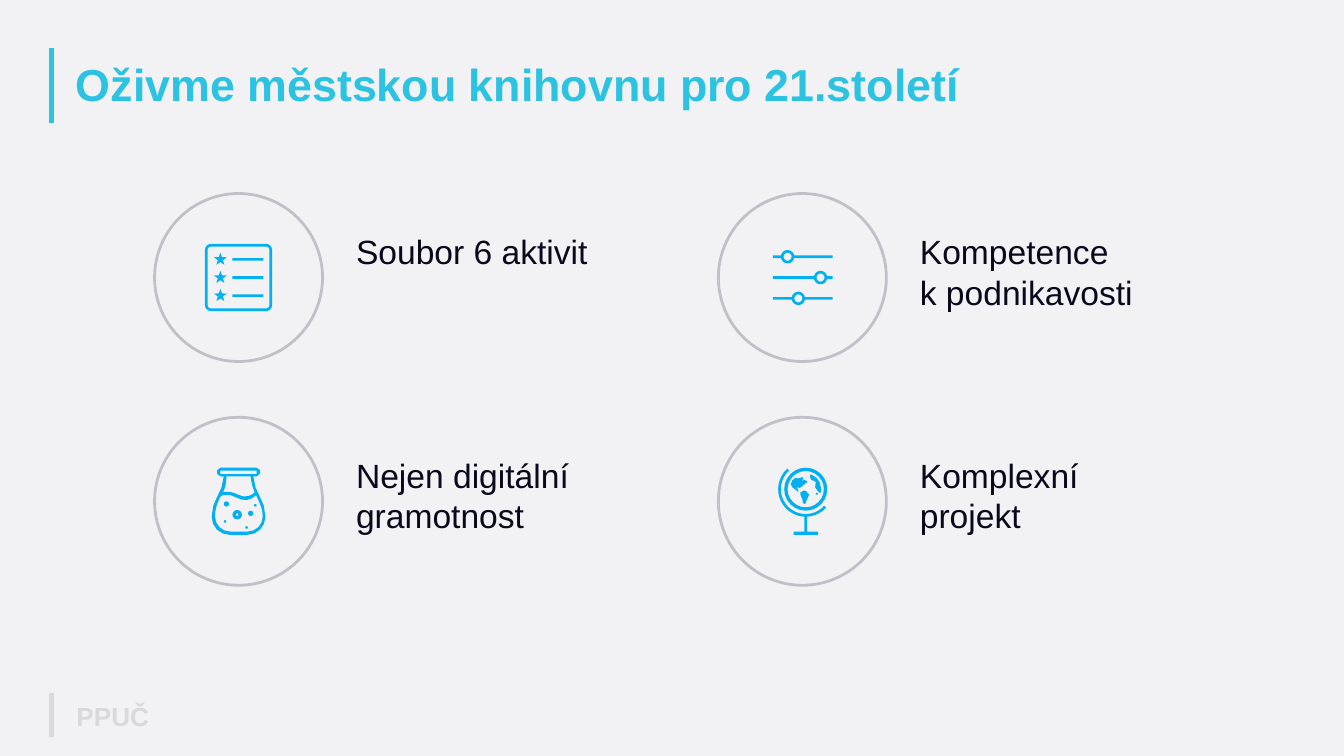
from math import cos, radians, sin

from lxml.etree import SubElement
from pptx import Presentation
from pptx.dml.color import RGBColor
from pptx.enum.shapes import MSO_CONNECTOR, MSO_SHAPE as Shape
from pptx.enum.text import MSO_ANCHOR as Anchor, MSO_AUTO_SIZE as AutoSize, PP_ALIGN as Align
from pptx.oxml.ns import qn
from pptx.util import Inches, Pt

TITLE = "Oživme městskou knihovnu pro 21.století"
FOOTER = "PPUČ"
PAPER, CYAN, GREY, RING, INK, BLUE = "F2F2F5", "2BC3E1", "D9D9D9", "C0C0C8", "0A091B", "00B0F0"

# Grid of cards: left of each column, top of each row
COLUMNS, ROWS = (2.3, 10.69), (2.88, 6.21)
RING_SIZE, LABEL_LEFT, LABEL_TOP = 2.5, 2.9, 0.51

# Icon measures are inches from the centre of the ring
STROKE = 0.04
LIST_ROWS = (-0.27, 0, 0.27)
SLIDERS = ((-0.22, -0.31), (0.27, 0), (-0.06, 0.31))
BUBBLES = ((-0.18, 0.04, 0.04), (0.18, 0.18, 0.04), (-0.2, 0.3, 0.02),
           (0.25, 0.06, 0.02), (0.12, 0.39, 0.02))
FLASK_CAP = [(0.27, -0.37), (0.32, -0.41), (0.32, -0.46), (0.27, -0.5),
             (-0.27, -0.5), (-0.32, -0.46), (-0.32, -0.41), (-0.27, -0.37)]
FLASK_SIDE = (((-0.22, -0.37), (-0.24, -0.09), (-0.4, -0.04), (-0.4, 0.23)),
              ((-0.4, 0.23), (-0.4, 0.38), (-0.28, 0.5), (-0.13, 0.5)))
FLASK_NECK = (((0.18, -0.37), (0.19, -0.26), (0.22, -0.19), (0.24, -0.13)),
              ((0.24, -0.13), (0.21, -0.1), (0.1, -0.03), (-0.01, -0.1)),
              ((-0.01, -0.1), (-0.1, -0.15), (-0.18, -0.14), (-0.23, -0.14)),
              ((-0.23, -0.14), (-0.2, -0.19), (-0.18, -0.27), (-0.18, -0.37)))
FLASK_LIQUID = (((-0.13, 0.45), (-0.25, 0.45), (-0.35, 0.35), (-0.35, 0.23)),
                ((-0.35, 0.23), (-0.35, 0.11), (-0.32, 0.04), (-0.28, -0.05)),
                ((-0.26, -0.08), (-0.25, -0.08), (-0.16, -0.13), (-0.04, -0.06)),
                ((-0.04, -0.06), (0.07, 0), (0.17, 0), (0.26, -0.09)),
                ((0.28, -0.05), (0.32, 0.04), (0.36, 0.11), (0.36, 0.23)),
                ((0.36, 0.23), (0.36, 0.35), (0.26, 0.45), (0.14, 0.45)))
GLOBE_X, GLOBE_Y = 0.05, -0.18
LANDS = [
    [(-0.17, -0.25), (-0.15, -0.31), (-0.1, -0.35), (-0.07, -0.34), (-0.03, -0.35), (0.01, -0.36),
     (0.01, -0.33), (-0.01, -0.3), (0.03, -0.32), (0.08, -0.29), (0.04, -0.26), (-0.02, -0.21),
     (-0.04, -0.2), (-0.08, -0.21), (-0.06, -0.16), (-0.06, -0.14), (-0.15, -0.21)],
    [(0.02, -0.16), (-0.03, -0.13), (-0.03, -0.1), (0, -0.03), (0.01, 0.03), (0.04, 0.04),
     (0.05, 0.02), (0.08, -0.05), (0.1, -0.1), (0.08, -0.12), (0.06, -0.15)],
    [(0.12, -0.35), (0.11, -0.38), (0.13, -0.4), (0.21, -0.35), (0.26, -0.28), (0.28, -0.18),
     (0.27, -0.12), (0.24, -0.14), (0.19, -0.21), (0.2, -0.29), (0.18, -0.3), (0.13, -0.32)],
    [(0.2, -0.13), (0.23, -0.12), (0.23, -0.1), (0.2, -0.1)],
]


def colour(hex_text):
    return RGBColor.from_string(hex_text)


def trace(curves, steps=4):
    """Return points along cubic Bézier curves."""
    points = []
    for curve in curves:
        for step in range(steps + 1):
            t = step / steps
            weights = ((1 - t) ** 3, 3 * t * (1 - t) ** 2, 3 * t * t * (1 - t), t ** 3)
            points.append(tuple(sum(w * p[axis] for w, p in zip(weights, curve))
                                for axis in (0, 1)))
    return points


def arc(x, y, radius, start, stop, steps):
    angles = [radians(start + (stop - start) * step / steps) for step in range(steps + 1)]
    return [(x + radius * cos(a), y + radius * sin(a)) for a in angles]


def disc(x, y, radius, corners=16):
    return arc(x, y, radius, 0, 360, corners)[:-1]


def bar(left, right, y, height=STROKE):
    top, bottom = y - height / 2, y + height / 2
    return [(left, top), (right, top), (right, bottom), (left, bottom)]


def rounded_square(half, radius):
    inner = half - radius
    corners = ((inner, inner), (-inner, inner), (-inner, -inner), (inner, -inner))
    return [point for turn, (x, y) in enumerate(corners)
            for point in arc(x, y, radius, 90 * turn, 90 * turn + 90, 4)]


def star(x, y, radius=0.1):
    points = []
    for corner in range(10):
        reach = radius * (0.4 if corner % 2 else 1)
        angle = radians(36 * corner - 90)
        points.append((x + reach * cos(angle), y + reach * sin(angle)))
    return points


def list_icon():
    contours = [rounded_square(0.5, 0.09), rounded_square(0.46, 0.05)]
    for y in LIST_ROWS:
        contours += [star(-0.27, y), bar(-0.09, 0.37, y)]
    return contours


def sliders_icon():
    contours = []
    for x, y in SLIDERS:
        contours += [bar(-0.44, x - 0.1, y), bar(x + 0.1, 0.45, y),
                     disc(x, y, 0.1), disc(x, y, 0.06)]
    return contours


def flask_icon():
    side = trace(FLASK_SIDE)
    mirrored = [(-x, y) for x, y in reversed(side)]
    return [side + mirrored + FLASK_CAP, bar(-0.27, 0.27, -0.43, 0.05),
            trace(FLASK_NECK), trace(FLASK_LIQUID),
            disc(-0.02, 0.2, 0.07), disc(-0.02, 0.2, 0.02, 8),
            *(disc(*bubble, 8) for bubble in BUBBLES)]


def globe_icon():
    x, y = GLOBE_X, GLOBE_Y
    band = arc(x, y, 0.41, 42, 228, 20) + arc(x, y, 0.37, 228, 42, 20)
    stand = [(x - 0.02, 0.23), (x + 0.02, 0.23), (x + 0.02, 0.45), (x + 0.18, 0.45),
             (x + 0.18, 0.5), (x - 0.18, 0.5), (x - 0.18, 0.45), (x - 0.02, 0.45)]
    return [disc(x, y, 0.32, 24), disc(x, y, 0.27, 24), band, stand, *LANDS]


# Label, its width and height, icon, column, row
CARDS = (
    ("Soubor 6 aktivit", 4.02, 0.71, list_icon, 0, 0),
    ("Nejen digitální gramotnost", 3.97, 1.31, flask_icon, 0, 1),
    ("Kompetence\nk podnikavosti", 3.58, 1.31, sliders_icon, 1, 0),
    ("Komplexní projekt", 3.58, 1.31, globe_icon, 1, 1),
)


def add_line(page, x, top, bottom, ink):
    line = page.shapes.add_connector(MSO_CONNECTOR.STRAIGHT, *map(Inches, (x, top, x, bottom)))
    line.line.color.rgb = colour(ink)
    line.line.width = Pt(5)
    SubElement(line._element.spPr, qn("a:effectLst"))


def add_icon(shapes, x, y, contours):
    """Draw all contours as one outline, where an inner contour cuts a hole."""
    placed = [[(Inches(x + dx), Inches(y + dy)) for dx, dy in points] for points in contours]
    builder = shapes.build_freeform(*placed[0][0])
    for points in placed:
        builder.move_to(*points[0])
        builder.add_line_segments(points[1:], close=True)
    icon = builder.convert_to_shape()
    icon.shadow.inherit = False
    icon.fill.solid()
    icon.fill.fore_color.rgb = colour(BLUE)
    icon.line.fill.background()


def write(box, text, size, ink, bold=False, anchor=Anchor.TOP, spacing=None):
    frame = box.text_frame
    frame.text = text
    frame.word_wrap = True
    frame.auto_size = AutoSize.NONE
    frame.vertical_anchor = anchor
    for para in frame.paragraphs:
        para.alignment = Align.LEFT
        para.line_spacing = spacing
        for span in para.runs:
            span.font.name = "Arial"
            span.font.size = Pt(size)
            span.font.bold = bold
            span.font.color.rgb = colour(ink)


def add_card(page, label, width, height, icon, column, row):
    left, top = COLUMNS[column], ROWS[row]
    shapes = page.shapes.add_group_shape().shapes
    box = shapes.add_textbox(Inches(left + LABEL_LEFT), Inches(top + LABEL_TOP),
                             Inches(width), Inches(height))
    write(box, label, 36, INK)
    ring = shapes.add_shape(Shape.OVAL, *map(Inches, (left, top, RING_SIZE, RING_SIZE)))
    ring.shadow.inherit = False
    ring.fill.background()
    ring.line.color.rgb = colour(RING)
    ring.line.width = Pt(3)
    add_icon(shapes, left + RING_SIZE / 2, top + RING_SIZE / 2, icon())


def main():
    deck = Presentation()
    deck.slide_width, deck.slide_height = Inches(20), Inches(11.25)
    page = deck.slides.add_slide(deck.slide_layouts[5])
    page.background.fill.solid()
    page.background.fill.fore_color.rgb = colour(PAPER)

    add_line(page, 0.77, 0.71, 1.83, CYAN)
    add_line(page, 0.77, 10.31, 10.96, GREY)
    title = page.shapes.title
    title.left, title.top, title.width, title.height = map(Inches, (1.03, 0.88, 18.05, 1.43))
    write(title, TITLE, 48, CYAN, bold=True, spacing=0.9)
    footer = page.shapes.add_textbox(*map(Inches, (1.04, 10.33, 4, 0.65)))
    write(footer, FOOTER, 28, GREY, bold=True, anchor=Anchor.MIDDLE)

    for card in CARDS:
        add_card(page, *card)
    deck.save("out.pptx")


if __name__ == "__main__":
    main()
